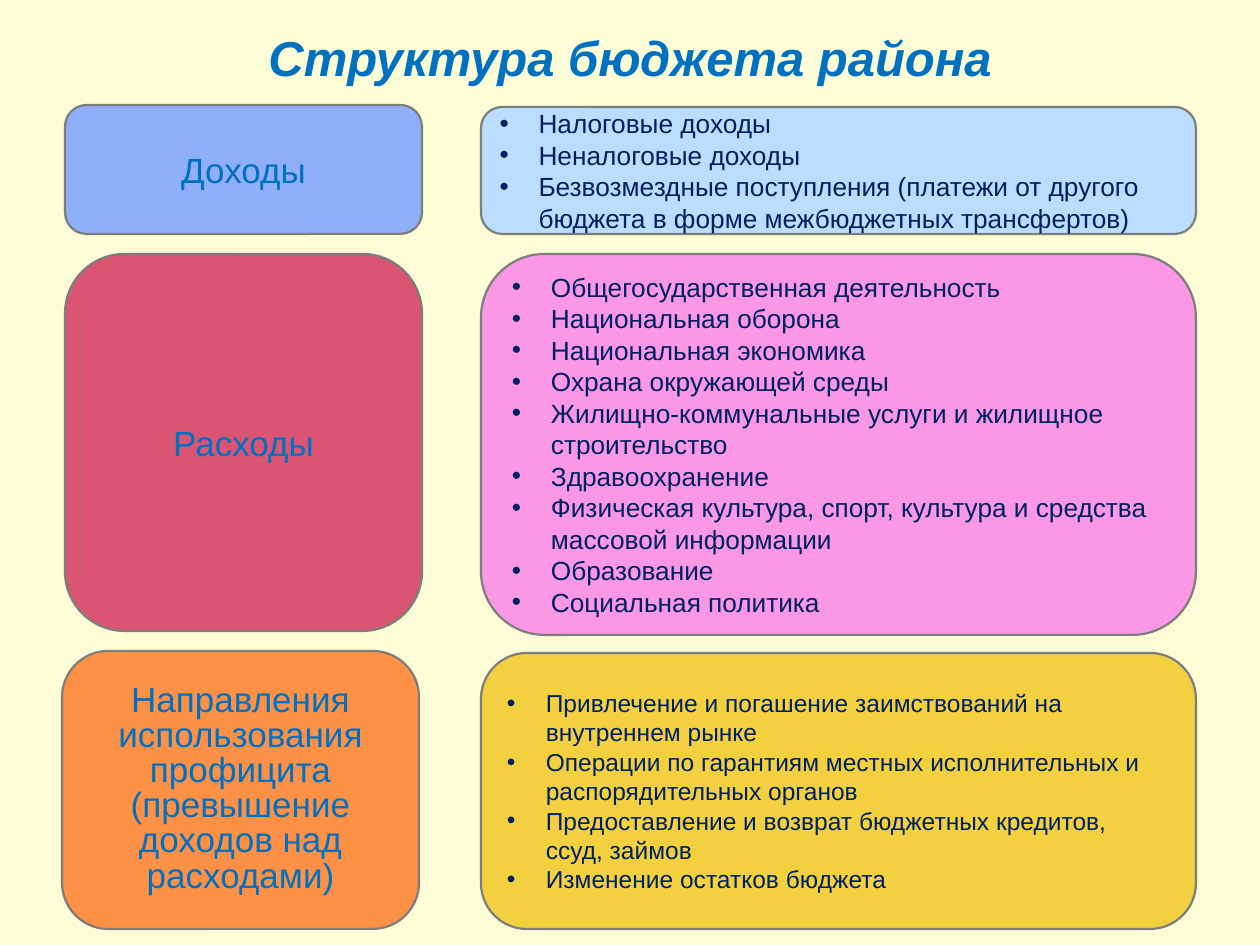
"""Build a slide that shows the structure of a district budget."""
import dataclasses

import pptx
import pptx.dml.color
import pptx.enum.shapes
import pptx.enum.text
import pptx.oxml
import pptx.oxml.ns
import pptx.util

EMU_PER_PX = 914400 / 126
ALIGN = pptx.enum.text.PP_ALIGN
MIDDLE = pptx.enum.text.MSO_ANCHOR.MIDDLE


def px(length):
    return pptx.util.Emu(round(length * EMU_PER_PX))


def rgb(code):
    return pptx.dml.color.RGBColor.from_string(code)


@dataclasses.dataclass(frozen=True)
class Theme:
    font: str = "Arial"
    background: str = "FCFDD7"
    heading: str = "0070C0"
    body: str = "002060"
    outline: str = "7D7D7D"
    outline_pt: float = 1.25
    title_pt: int = 28
    label_pt: int = 20
    indent_px: int = 39


class BudgetSlide:
    def __init__(self, presentation, theme):
        self.theme = theme
        self.slide = presentation.slides.add_slide(presentation.slide_layouts[5])
        self.slide.background.fill.solid()
        self.slide.background.fill.fore_color.rgb = rgb(theme.background)

    def style(self, paragraph, size, color, align, emphasis=False):
        paragraph.alignment = align
        for run in paragraph.runs:
            run.font.name = self.theme.font
            run.font.size = pptx.util.Pt(size)
            run.font.color.rgb = rgb(color)
            run.font.bold = run.font.italic = emphasis

    def title(self, text, left, top, width, height):
        heading = self.slide.shapes.title
        heading.left, heading.top = px(left), px(top)
        heading.width, heading.height = px(width), px(height)
        heading.text_frame.text = text
        heading.text_frame.vertical_anchor = MIDDLE
        self.style(heading.text_frame.paragraphs[0], self.theme.title_pt,
                   self.theme.heading, ALIGN.CENTER, emphasis=True)

    def panel(self, text, box, fill):
        panel = self.slide.shapes.add_shape(
            pptx.enum.shapes.MSO_SHAPE.ROUNDED_RECTANGLE, *map(px, box))
        panel.shadow.inherit = False
        panel.fill.solid()
        panel.fill.fore_color.rgb = rgb(fill)
        panel.line.color.rgb = rgb(self.theme.outline)
        panel.line.width = pptx.util.Pt(self.theme.outline_pt)
        panel.text_frame.word_wrap = True
        panel.text_frame.vertical_anchor = MIDDLE
        panel.text_frame.text = text
        return panel.text_frame.paragraphs

    def label(self, text, box, fill, spacing=None):
        for paragraph in self.panel(text, box, fill):
            self.style(paragraph, self.theme.label_pt, self.theme.heading, ALIGN.CENTER)
            if spacing:
                paragraph.line_spacing = pptx.util.Pt(spacing)

    def bullets(self, items, box, fill, size):
        indent = px(self.theme.indent_px)
        for paragraph in self.panel("\n".join(items), box, fill):
            self.style(paragraph, size, self.theme.body, ALIGN.LEFT)
            properties = paragraph._p.get_or_add_pPr()
            properties.set("marL", str(indent))
            properties.set("indent", str(-indent))
            properties.append(pptx.oxml.parse_xml(
                f'<a:buFont {pptx.oxml.ns.nsdecls("a")} typeface="{self.theme.font}"/>'))
            properties.append(pptx.oxml.parse_xml(
                f'<a:buChar {pptx.oxml.ns.nsdecls("a")} char="•"/>'))


INCOME = [
    "Налоговые доходы",
    "Неналоговые доходы",
    "Безвозмездные поступления (платежи от другого бюджета в форме межбюджетных трансфертов)",
]
EXPENSES = [
    "Общегосударственная деятельность",
    "Национальная оборона",
    "Национальная экономика",
    "Охрана окружающей среды",
    "Жилищно-коммунальные услуги и жилищное строительство",
    "Здравоохранение",
    "Физическая культура, спорт, культура и средства массовой информации",
    "Образование",
    "Социальная политика",
]
SURPLUS = [
    "Привлечение и погашение заимствований на внутреннем рынке",
    "Операции по гарантиям местных исполнительных и распорядительных органов",
    "Предоставление и возврат бюджетных кредитов, ссуд, займов",
    "Изменение остатков бюджета",
]
SURPLUS_LABEL = "Направления использования профицита (превышение доходов над расходами)"
LABEL_WIDTH = 357
LIST_LEFT, LIST_WIDTH = 481, 715


def main():
    presentation = pptx.Presentation()
    presentation.slide_width, presentation.slide_height = px(1260), px(945)
    budget = BudgetSlide(presentation, Theme())
    budget.title("Структура бюджета района", 63, 17, 1134, 79)

    budget.label("Доходы", (65, 105, LABEL_WIDTH, 129), "8FB0F9")
    budget.bullets(INCOME, (LIST_LEFT, 107, LIST_WIDTH, 127), "BBDDFF", 15)
    budget.label("Расходы", (65, 254, LABEL_WIDTH, 377), "DA5474")
    budget.bullets(EXPENSES, (LIST_LEFT, 254, LIST_WIDTH, 381), "FA98E5", 15)
    budget.label(SURPLUS_LABEL, (62, 651, LABEL_WIDTH, 278), "FF9147", spacing=20)
    budget.bullets(SURPLUS, (LIST_LEFT, 653, LIST_WIDTH, 276), "F2D040", 14)

    presentation.save("out.pptx")


if __name__ == "__main__":
    main()
